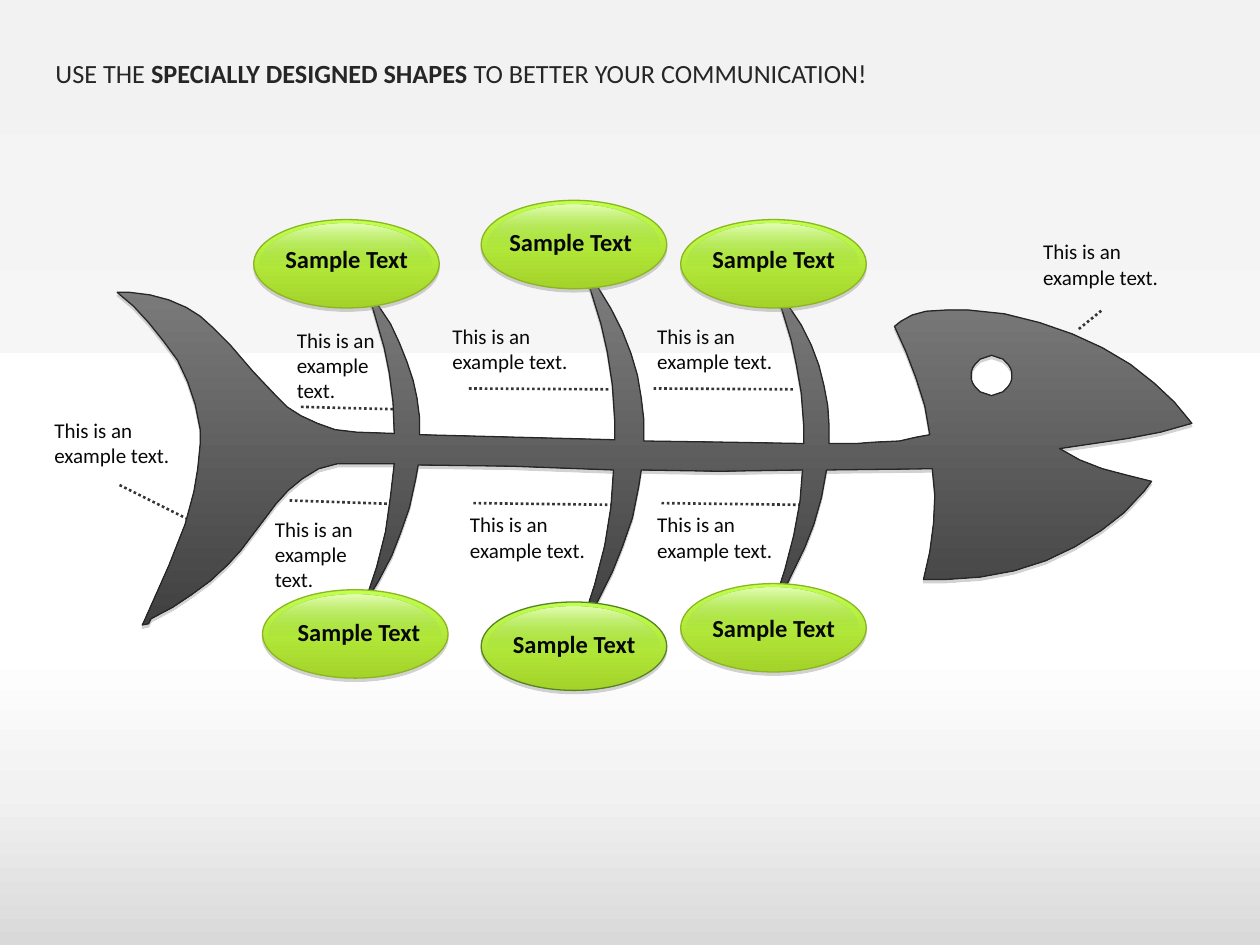
from math import cos, sin, tau

from lxml.etree import SubElement
from pptx import Presentation
from pptx.dml.color import RGBColor
from pptx.enum.dml import MSO_LINE
from pptx.enum.shapes import MSO_CONNECTOR, MSO_SHAPE
from pptx.enum.text import MSO_ANCHOR, MSO_AUTO_SIZE, PP_ALIGN
from pptx.oxml.ns import qn
from pptx.util import Pt

WHITE = RGBColor(0xFF, 0xFF, 0xFF)
PALE = RGBColor(0xF2, 0xF2, 0xF2)
SILVER = RGBColor(0xD9, 0xD9, 0xD9)
GREY = RGBColor(0x7F, 0x7F, 0x7F)
SHADE = RGBColor(0x80, 0x80, 0x80)
DARK = RGBColor(0x40, 0x40, 0x40)
INK = RGBColor(0x26, 0x26, 0x26)
DOTS = RGBColor(0x35, 0x36, 0x37)
BLACK = RGBColor(0x08, 0x08, 0x08)
LIME = RGBColor(0xC0, 0xFF, 0x4D)
LEAF = RGBColor(0xA4, 0xD3, 0x29)
RIM = RGBColor(0x8C, 0xB5, 0x22)
MOSS = RGBColor(0x56, 0x84, 0x24)
GRASS = RGBColor(0x70, 0xAC, 0x2E)

# The fish is plotted on a grid whose unit is 0.72 pt.
GRID = Pt(0.72)
SNOUT = [
    (946, 336), (932, 319), (916, 304), (897, 289), (875, 276), (851, 265),
    (825, 256), (797, 249), (768, 246), (752, 246), (735, 247), (724, 250),
    (715, 255), (710, 259), (719, 279), (727, 300), (734, 322), (738, 345),
    (727, 347), (714, 350), (693, 351), (680, 352)]
UPPER_RIBS = [
    (658, 352), (658, 337), (657, 322), (654, 306), (650, 290), (644, 274),
    (636, 258), (626, 243), (614, 227), (621, 247), (628, 270), (632, 289),
    (636, 312), (638, 338), (638, 352), (579, 351),
    (511, 350), (511, 333), (509, 316), (506, 298), (501, 281), (494, 263),
    (485, 245), (474, 227), (461, 209), (469, 231), (477, 257), (482, 279),
    (486, 305), (488, 334), (488, 349),
    (333, 345), (333, 331), (331, 316), (328, 302), (323, 287), (317, 272),
    (310, 257), (300, 242), (289, 227), (296, 245), (305, 276), (309, 296),
    (312, 319), (313, 344)]
TAIL = [
    (283, 343), (266, 341), (252, 336), (239, 330), (228, 323), (219, 314),
    (201, 295), (183, 274), (169, 260), (159, 251), (148, 244), (134, 238),
    (119, 234), (103, 232), (93, 232), (106, 243), (118, 256), (130, 271),
    (141, 286), (149, 303), (155, 321), (159, 341), (159, 352), (157, 372),
    (154, 390), (147, 416), (134, 449), (114, 494), (113, 496), (118, 495),
    (120, 491), (137, 482), (152, 472), (167, 461), (181, 448), (191, 437),
    (210, 412), (219, 400), (229, 389), (240, 380), (253, 372), (268, 368)]
LOWER_RIBS = [
    (313, 368), (310, 394), (306, 422), (299, 450), (289, 480), (300, 462),
    (311, 441), (318, 423), (325, 403), (330, 380), (332, 369), (406, 370),
    (487, 373), (485, 402), (480, 433), (472, 464), (461, 498), (474, 478),
    (486, 454), (494, 434), (502, 411), (507, 386), (509, 373), (571, 374),
    (637, 373), (635, 398), (630, 425), (623, 452), (614, 480), (625, 463),
    (639, 434), (646, 416), (652, 395), (656, 373)]
JAW = [
    (740, 372), (742, 393), (741, 415), (738, 438), (733, 460), (749, 460),
    (778, 458), (805, 453), (830, 445), (853, 434), (874, 421), (892, 407),
    (908, 390), (914, 382), (894, 377), (875, 372), (857, 365), (841, 356),
    (868, 352), (895, 348), (921, 343)]
EYE = [(787 + 16 * cos(tau * i / 32), 298 + 15.5 * sin(tau * i / 32))
       for i in range(32)]

# Oval left and top, label left and top, rim colour.
OVALS = [
    (145, 125.5, 156, 136, RIM), (150, 337, 163, 349, RIM),
    (275, 114.5, 284, 126, RIM), (389, 125.5, 400, 136, RIM),
    (275, 344, 286, 356, MOSS), (389, 333.5, 400, 347, RIM)]
# Left, top, width, height.
NOTES = [
    (24, 235, 92, 36.5), (589, 133, 92, 36.5), (162.5, 183.5, 70.5, 51),
    (251.5, 181.5, 92, 36.5), (368.5, 181.5, 92, 36.5), (150, 291.5, 74, 51),
    (261.5, 289, 92, 36.5), (368.5, 289, 92, 36.5)]
LEADERS = [
    (172, 232.5, 232.5, 234), (616.5, 188, 630, 177), (110, 298, 67, 276.5),
    (165.5, 286, 226, 288), (270.5, 287.5, 351.5, 288.5),
    (378, 287.5, 458.5, 288.5), (268, 222, 348.5, 222.5),
    (373.5, 222, 454.5, 222.5)]


def tint(node, color, alpha):
    rgb = SubElement(node, qn("a:srgbClr"), val=str(color))
    if alpha < 100:
        SubElement(rgb, qn("a:alpha"), val=str(alpha * 1000))


def blend(fill, root, stops):
    """Fill from top to bottom with (percent, colour, alpha) stops."""
    fill.gradient()
    fill.gradient_angle = 270
    ramp = next(root.iter(qn("a:gsLst")))
    for old in list(ramp):
        ramp.remove(old)
    for pos, color, alpha in stops:
        tint(SubElement(ramp, qn("a:gs"), pos=str(pos * 1000)), color, alpha)


def dress(shape, stops, rim=None):
    """Give a gradient and, with a rim colour, an outline and a shadow."""
    blend(shape.fill, shape.element, stops)
    shape.shadow.inherit = False
    if rim is None:
        shape.line.fill.background()
        return
    shape.line.color.rgb = rim
    shape.line.width = Pt(0.75)
    glow = shape.element.spPr.find(qn("a:effectLst"))
    drop = SubElement(glow, qn("a:outerShdw"), blurRad="0",
                      dist=str(Pt(1.8)), dir="5400000", rotWithShape="0")
    tint(drop, SHADE, 35)


def set_font(run, size, color, bold=False):
    style = {"name": "Calibri", "size": Pt(size), "bold": bold}
    for key, value in style.items():
        setattr(run.font, key, value)
    run.font.color.rgb = color


def add_title(slide):
    title = slide.shapes.title
    place = {"left": 24.5, "top": 29.5, "width": 598, "height": 25}
    for key, value in place.items():
        setattr(title, key, Pt(value))
    frame = title.text_frame
    frame.auto_size = MSO_AUTO_SIZE.NONE
    frame.vertical_anchor = MSO_ANCHOR.MIDDLE
    line = frame.paragraphs[0]
    line.alignment = PP_ALIGN.LEFT
    for text, bold in (("USE THE ", False),
                       ("SPECIALLY DESIGNED SHAPES ", True),
                       ("TO BETTER YOUR COMMUNICATION!", False)):
        run = line.add_run()
        run.text = text
        set_font(run, 15, INK, bold)


def add_text(slide, box, text, size, bold=False):
    frame = slide.shapes.add_textbox(*map(Pt, box)).text_frame
    frame.word_wrap = True
    run = frame.paragraphs[0].add_run()
    run.text = text
    set_font(run, size, BLACK, bold)


def add_leader(slide, ends):
    link = slide.shapes.add_connector(MSO_CONNECTOR.STRAIGHT, *map(Pt, ends))
    link.line.color.rgb = DOTS
    link.line.width = Pt(1.5)
    link.line.dash_style = MSO_LINE.ROUND_DOT
    SubElement(link.element.spPr, qn("a:effectLst"))


def add_fish(slide):
    body = SNOUT + UPPER_RIBS + TAIL + LOWER_RIBS + JAW
    pen = slide.shapes.build_freeform(*body[0], scale=GRID)
    pen.add_line_segments(body[1:])
    pen.move_to(*EYE[0])
    pen.add_line_segments(EYE[1:])
    dress(pen.convert_to_shape(), [(0, GREY, 100), (100, DARK, 100)], INK)


def add_shape(slide, kind, box, stops, rim=None):
    dress(slide.shapes.add_shape(kind, *map(Pt, box)), stops, rim)


def add_oval(slide, left, top, rim):
    add_shape(slide, MSO_SHAPE.OVAL, (left, top, 106, 50.5),
              [(0, LIME, 100), (100, LEAF, 100)], rim)
    add_shape(slide, MSO_SHAPE.OVAL, (left + 3.6, top + 2.6, 98, 47),
              [(0, WHITE, 59), (52, GRASS, 0)])


def main():
    deck = Presentation()
    deck.slide_width, deck.slide_height = Pt(720), Pt(540)
    slide = deck.slides.add_slide(deck.slide_layouts[5])
    blend(slide.background.fill, slide.element,
          [(0, PALE, 100), (100, WHITE, 100)])
    add_shape(slide, MSO_SHAPE.RECTANGLE, (0, 202, 720, 338),
              [(50, WHITE, 100), (74, PALE, 100), (100, SILVER, 100)])
    add_title(slide)
    for ends in LEADERS:
        add_leader(slide, ends)
    add_fish(slide)
    for box in NOTES:
        add_text(slide, box, "This is an example text.", 12)
    for left, top, x, y, rim in OVALS:
        add_oval(slide, left, top, rim)
        add_text(slide, (x, y, 90, 24.5), "Sample Text", 14, True)
    deck.save("out.pptx")


if __name__ == "__main__":
    main()
